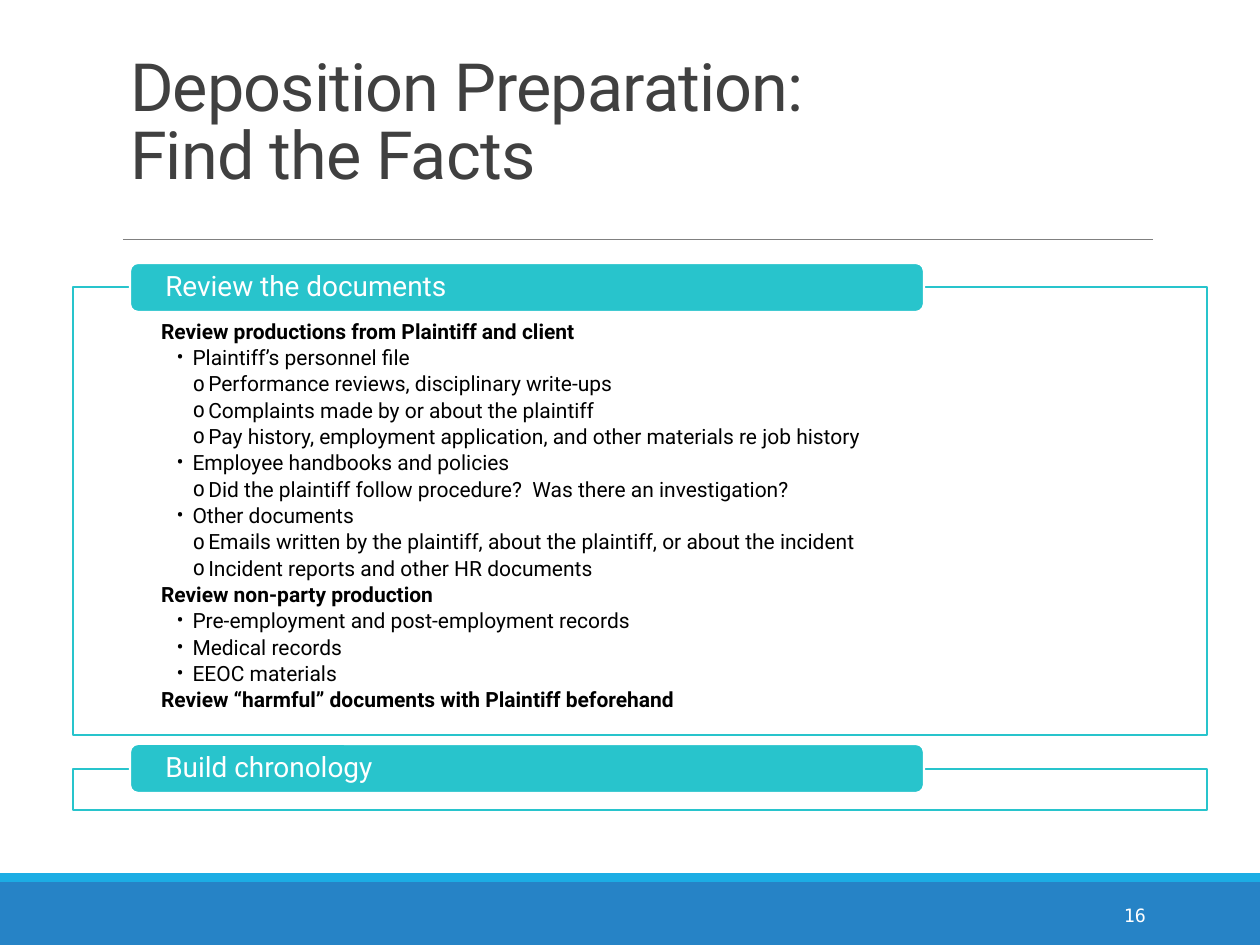
from lxml import etree
from pptx import Presentation
from pptx import util as u
from pptx.dml import color
from pptx.enum import shapes, text
from pptx.oxml import ns

SCALE = 914400 / 126
SANS, MONO = "Roboto", "DejaVu Sans Mono"
TEAL, WHITE = "28C4CC", "FFFFFF"
MARKS = {0: None, 1: "•", 2: "o"}
FACTS = [
    (0, "Review productions from Plaintiff and client"),
    (1, "Plaintiff’s personnel file"),
    (2, "Performance reviews, disciplinary write-ups"),
    (2, "Complaints made by or about the plaintiff"),
    (2, "Pay history, employment application, and other materials re job history"),
    (1, "Employee handbooks and policies"),
    (2, "Did the plaintiff follow procedure?  Was there an investigation?"),
    (1, "Other documents"),
    (2, "Emails written by the plaintiff, about the plaintiff, or about the incident"),
    (2, "Incident reports and other HR documents"),
    (0, "Review non-party production"),
    (1, "Pre-employment and post-employment records"),
    (1, "Medical records"),
    (1, "EEOC materials"),
    (0, "Review “harmful” documents with Plaintiff beforehand"),
]


def px(n):
    return u.Emu(round(n * SCALE))


def rgb(code):
    return color.RGBColor.from_string(code)


def node(parent, tag, **attrs):
    return etree.SubElement(parent, ns.qn(tag), attrs)


def place(item, x, y, w, h):
    item.left, item.top, item.width, item.height = px(x), px(y), px(w), px(h)


def paint(item, fill, edge=None):
    item.fill.solid()
    item.fill.fore_color.rgb = rgb(fill)
    if edge:
        item.line.color.rgb = rgb(edge)
        item.line.width = u.Pt(1.25)
    else:
        item.line.fill.background()


def panel(item):
    paint(item, WHITE, TEAL)
    tint = item.fill._xPr.find(".//" + ns.qn("a:srgbClr"))
    node(tint, "a:alpha", val="90000")


def setup(item, anchor, left=0, top=0, right=0, low=0):
    frame = item.text_frame
    frame.word_wrap = True
    frame.auto_size = text.MSO_AUTO_SIZE.NONE
    frame.vertical_anchor = anchor
    frame.margin_left, frame.margin_top = px(left), px(top)
    frame.margin_right, frame.margin_bottom = px(right), px(low)
    return frame


def write(para, words, size, hue, face=SANS, bold=False):
    run = para.add_run()
    run.text = words
    font = run.font
    font.size, font.name, font.bold = u.Pt(size), face, bold
    font.color.rgb = rgb(hue)
    return run


def space(para, line, after=0, align=text.PP_ALIGN.LEFT):
    para.alignment = align
    para.line_spacing = line
    para.space_before, para.space_after = u.Pt(0), u.Pt(after)


def box(slide, kind, x, y, w, h):
    item = slide.shapes.add_shape(kind, px(x), px(y), px(w), px(h))
    item.shadow.inherit = False
    return item


def base(slide):
    for y, h, hue in ((882, 63, "2683C6"), (873, 9, "1CADE4")):
        paint(box(slide, shapes.MSO_SHAPE.RECTANGLE, 0, y, 1260, h), hue)
    rule = slide.shapes.add_connector(
        shapes.MSO_CONNECTOR.STRAIGHT, px(123), px(239), px(1153), px(239))
    rule.line.color.rgb = rgb("808080")
    rule.line.width = u.Pt(0.5)
    node(rule._element.spPr, "a:effectLst")
    label = slide.shapes.add_textbox(px(1023), px(890), px(136), px(50))
    frame = setup(label, text.MSO_ANCHOR.MIDDLE, 13, 6, 13, 6)
    para = frame.paragraphs[0]
    space(para, 1, 6, text.PP_ALIGN.RIGHT)
    write(para, "16", 10.5, WHITE, MONO)


def head(slide):
    title = slide.shapes.title
    place(title, 117, 39, 1036, 160)
    para = setup(title, text.MSO_ANCHOR.BOTTOM, 13, 6, 13, 6).paragraphs[0]
    space(para, 0.85)
    for i, words in enumerate(("Deposition Preparation:", "Find the Facts")):
        if i:
            para.add_line_break()
        run = write(para, words, 38, "404040")
        run.font._element.set("spc", "-50")


def point(para, level, words):
    para.level = level
    space(para, 0.9, 2.1)
    props = para._p.get_or_add_pPr()
    step = u.Inches(0.125)
    props.set("marL", str(step * (level + 1)))
    props.set("indent", str(-step))
    mark = MARKS[level]
    if mark:
        node(props, "a:buFont", typeface=MONO if mark == "o" else SANS)
        node(props, "a:buChar", char=mark)
    else:
        node(props, "a:buNone")
    write(para, words, 12, "000000", bold=level == 0)


def facts(slide):
    body = slide.placeholders[1]
    place(body, 73, 287, 1134, 448)
    panel(body)
    frame = setup(body, text.MSO_ANCHOR.TOP, 88, 34, 88, 11)
    for i, (level, words) in enumerate(FACTS):
        para = frame.add_paragraph() if i else frame.paragraphs[0]
        point(para, level, words)


def tab(slide, y, words):
    item = box(slide, shapes.MSO_SHAPE.ROUNDED_RECTANGLE, 130, y, 794, 49)
    paint(item, TEAL, WHITE)
    para = setup(item, text.MSO_ANCHOR.MIDDLE, 33, 0, 33).paragraphs[0]
    space(para, 0.9)
    write(para, words, 16, WHITE)


def main():
    deck = Presentation()
    deck.slide_width, deck.slide_height = px(1260), px(945)
    slide = deck.slides.add_slide(deck.slide_layouts[1])
    base(slide)
    head(slide)
    facts(slide)
    panel(box(slide, shapes.MSO_SHAPE.RECTANGLE, 73, 769, 1134, 41))
    tab(slide, 263, "Review the documents")
    tab(slide, 744, "Build chronology")
    deck.save("out.pptx")


if __name__ == "__main__":
    main()
